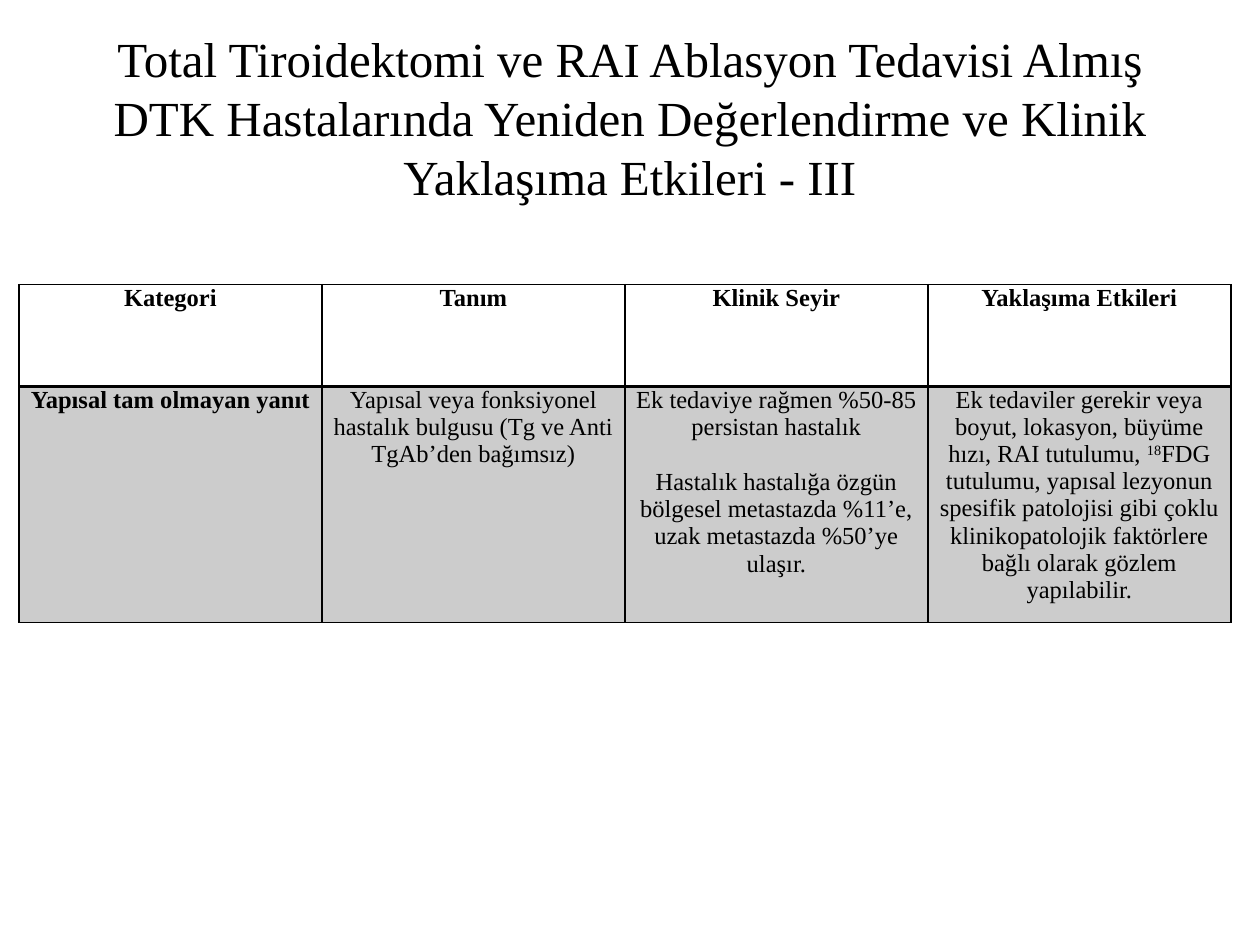
import pptx
import pptx.util
import pptx.dml.color
import pptx.enum.text
import pptx.oxml
import pptx.oxml.ns
from pptx.util import Inches

BLACK = pptx.dml.color.RGBColor(0, 0, 0)
FONT = "Times New Roman"
SUPERSCRIPT = "^"

TITLE = ("Total Tiroidektomi ve RAI Ablasyon Tedavisi Almış DTK Hastalarında "
         "Yeniden Değerlendirme ve Klinik Yaklaşıma Etkileri - III")
HEADERS = ["Kategori", "Tanım", "Klinik Seyir", "Yaklaşıma Etkileri"]
RESPONSE = [
    ["Yapısal tam olmayan yanıt"],
    ["Yapısal veya fonksiyonel hastalık bulgusu (Tg ve Anti TgAb’den bağımsız)"],
    ["Ek tedaviye rağmen %50-85 persistan hastalık",
     "Hastalık hastalığa özgün bölgesel metastazda %11’e, "
     "uzak metastazda %50’ye ulaşır."],
    ["Ek tedaviler gerekir veya boyut, lokasyon, büyüme hızı, RAI tutulumu, "
     "^18^FDG tutulumu, yapısal lezyonun spesifik patolojisi gibi "
     "çoklu klinikopatolojik faktörlere bağlı olarak gözlem yapılabilir."],
]


def style_paragraph(paragraph, size, bold=False):
    paragraph.alignment = pptx.enum.text.PP_ALIGN.CENTER
    font = paragraph.font
    font.name, font.size, font.bold = FONT, pptx.util.Pt(size), bold
    font.color.rgb = BLACK


def add_title(slide, left, top, width, height):
    frame = slide.shapes.add_textbox(left, top, width, height).text_frame
    frame.word_wrap = True
    frame.vertical_anchor = pptx.enum.text.MSO_ANCHOR.MIDDLE
    frame.text = TITLE
    style_paragraph(frame.paragraphs[0], 28)


def fill_cell_text(cell, texts, bold):
    """Write one paragraph per text; parts between ^ marks are superscript."""
    cell.margin_left = cell.margin_right = Inches(0.07)
    cell.margin_top = cell.margin_bottom = 0
    frame = cell.text_frame
    for index, text in enumerate(texts):
        paragraph = frame.add_paragraph() if index else frame.paragraphs[0]
        style_paragraph(paragraph, 14, bold)
        if index:
            paragraph.space_before = pptx.util.Pt(16)
        for part_index, part in enumerate(text.split(SUPERSCRIPT)):
            run = paragraph.add_run()
            run.text = part
            if part_index % 2:
                run.font._element.set("baseline", "30000")


def set_borders(cell, widths):
    """Draw black borders, given widths in points for left, right, top, bottom."""
    properties = cell._tc.get_or_add_tcPr()
    for index, (side, width) in enumerate(zip("LRTB", widths)):
        properties.insert(index, pptx.oxml.parse_xml(
            f'<a:ln{side} {pptx.oxml.ns.nsdecls("a")} w="{pptx.util.Pt(width)}">'
            f'<a:solidFill><a:srgbClr val="{BLACK}"/></a:solidFill></a:ln{side}>'))


def shade_cell(cell, opacity):
    cell.fill.solid()
    cell.fill.fore_color.rgb = BLACK
    color = cell._tc.tcPr.find(".//" + pptx.oxml.ns.qn("a:srgbClr"))
    color.append(pptx.oxml.parse_xml(
        f'<a:alpha {pptx.oxml.ns.nsdecls("a")} val="{opacity * 1000}"/>'))


def add_response_table(slide, left, top, width, height):
    table = slide.shapes.add_table(2, len(HEADERS), left, top, width, height).table
    table.first_row = table.horz_banding = False
    table.rows[0].height = Inches(0.81)
    table.rows[1].height = height - Inches(0.81)
    for column, (header, texts) in enumerate(zip(HEADERS, RESPONSE)):
        header_cell, body_cell = table.cell(0, column), table.cell(1, column)
        fill_cell_text(header_cell, [header], True)
        header_cell.fill.background()
        set_borders(header_cell, (1, 1, 1, 2))
        fill_cell_text(body_cell, texts, column == 0)
        shade_cell(body_cell, 20)
        set_borders(body_cell, (1, 1, 2, 1))


def main():
    presentation = pptx.Presentation()
    presentation.slide_width, presentation.slide_height = Inches(10), Inches(7.5)
    slide = presentation.slides.add_slide(presentation.slide_layouts[6])
    add_title(slide, Inches(0.5), Inches(0.3), Inches(9), Inches(1.25))
    add_response_table(slide, Inches(0.15), Inches(2.26), Inches(9.62), Inches(2.68))
    presentation.save("out.pptx")


if __name__ == "__main__":
    main()
